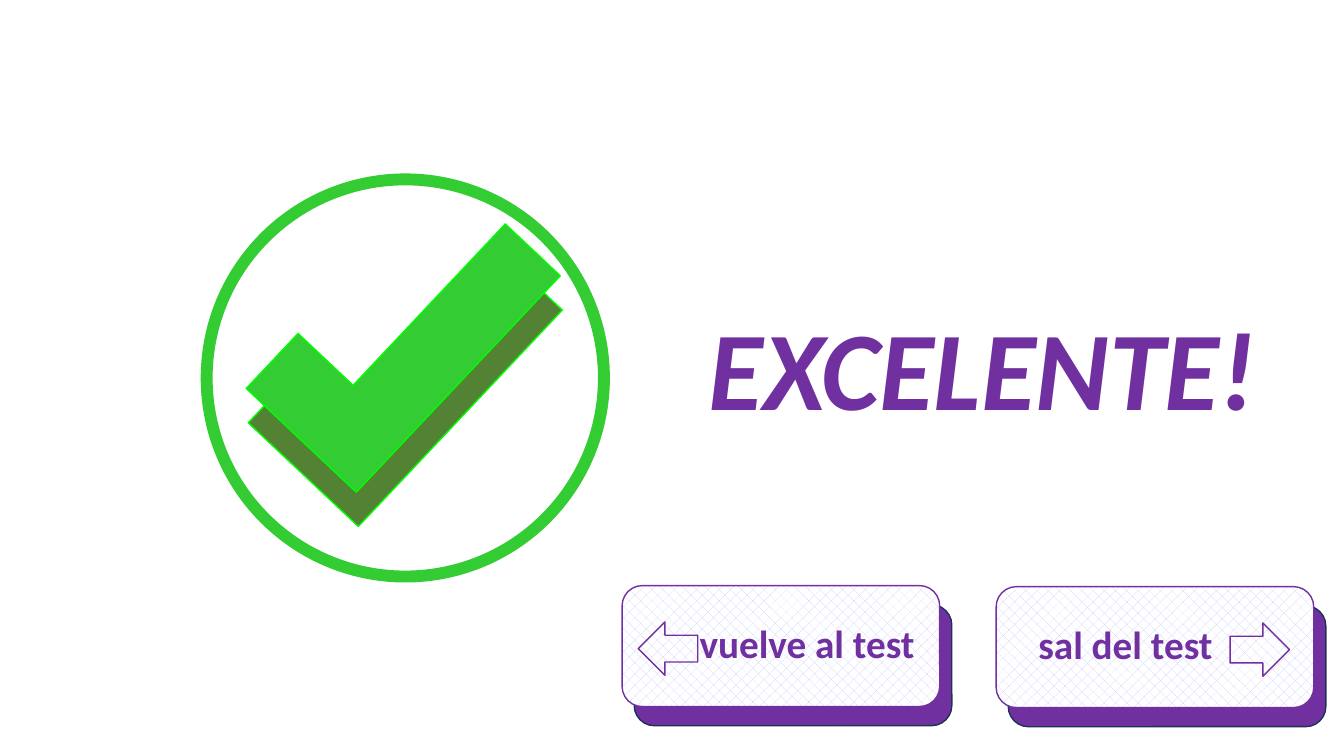
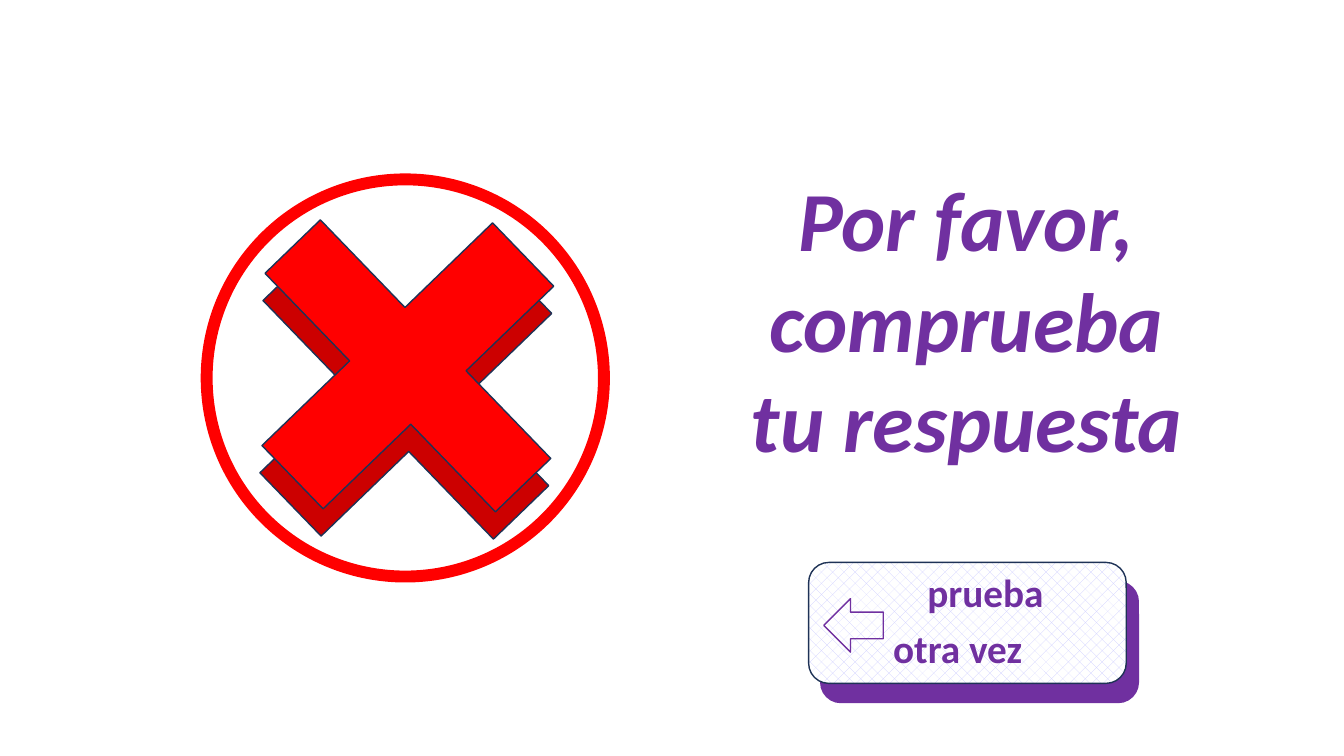
from dataclasses import dataclass

from pptx import Presentation
from pptx.dml.color import RGBColor
from pptx.enum import dml, shapes, text
from pptx.oxml.ns import qn
from pptx.util import Inches, Pt

SHAPE = shapes.MSO_SHAPE


@dataclass(frozen=True)
class Theme:
    font: str = "Calibri"
    purple: str = "7030A0"
    lilac: str = "CCCCFF"
    white: str = "FFFFFF"
    navy: str = "1E3256"
    green: str = "33CC33"
    dark_green: str = "548235"
    lime: str = "00FF00"
    red: str = "FF0000"
    dark_red: str = "CC0000"
    praise_size: int = 80
    advice_size: int = 60
    button_size: int = 28
    thin: float = 1
    ring: float = 8.5


THEME = Theme()
RING_BOX = (2.05, 1.78, 3.94, 3.94)
BUTTON_SIZE = (3.15, 1.2)
BUTTON_SHADOW = (0.12, 0.19)
ARROW_SIZE = (0.59, 0.53)
ARROW_DROP = 0.36


def rgb(value):
    return RGBColor.from_string(value)


def add_preset(slide, kind, box, line, fill=None, width=THEME.thin, rotation=0):
    """Add an outlined preset shape, filled only if a colour is given."""
    shape = slide.shapes.add_shape(kind, *map(Inches, box))
    shape.shadow.inherit = False
    shape.rotation = rotation
    shape.line.color.rgb = rgb(line)
    shape.line.width = Pt(width)
    if fill:
        shape.fill.solid()
        shape.fill.fore_color.rgb = rgb(fill)
    else:
        shape.fill.background()
    return shape


def style_runs(paragraph, size, italic=False):
    for run in paragraph.runs:
        font = run.font
        font.name, font.size = THEME.font, Pt(size)
        font.bold, font.italic = True, italic
        font.color.rgb = rgb(THEME.purple)


def add_message_slide(deck, message, box, size):
    """Add a slide whose title is the large message on the right."""
    slide = deck.slides.add_slide(deck.slide_layouts[5])
    title = slide.shapes.title
    title.left, title.top, title.width, title.height = map(Inches, box)
    frame = title.text_frame
    frame.text = message
    frame.word_wrap = False
    frame.auto_size = text.MSO_AUTO_SIZE.NONE
    frame.vertical_anchor = text.MSO_ANCHOR.TOP
    for paragraph in frame.paragraphs:
        paragraph.alignment = text.PP_ALIGN.CENTER
        style_runs(paragraph, size, italic=True)
    return slide


def add_ring(slide, color):
    add_preset(slide, SHAPE.FLOWCHART_CONNECTOR, RING_BOX, color, width=THEME.ring)


def add_tick(slide, box, fill):
    """Add a mirrored corner shape, turned into a tick."""
    tick = add_preset(slide, SHAPE.from_xml("corner"), box, THEME.lime, fill,
                      rotation=43.3)
    tick._element.spPr.find(qn("a:xfrm")).set("flipH", "1")


def add_cross(slide, box, fill):
    cross = add_preset(slide, SHAPE.CROSS, box, THEME.navy, fill, rotation=46)
    cross.adjustments[0] = 0.38


def add_button(slide, left, top, label, inset, arrow, arrow_offset,
               line=THEME.purple, shadow_line=THEME.navy, first_indent=0):
    """Add a patterned button with its offset shadow, label and arrow."""
    dx, dy = BUTTON_SHADOW
    add_preset(slide, SHAPE.ROUNDED_RECTANGLE, (left + dx, top + dy, *BUTTON_SIZE),
               shadow_line, THEME.purple)
    button = add_preset(slide, SHAPE.ROUNDED_RECTANGLE, (left, top, *BUTTON_SIZE), line)
    button.fill.patterned()
    button.fill.pattern = dml.MSO_PATTERN.PERCENT_25
    button.fill.fore_color.rgb = rgb(THEME.lilac)
    button.fill.back_color.rgb = rgb(THEME.white)

    # Label
    frame = button.text_frame
    frame.text = label
    frame.word_wrap = True
    frame.vertical_anchor = text.MSO_ANCHOR.MIDDLE
    frame.margin_left, frame.margin_right = Inches(inset), 0
    for paragraph in frame.paragraphs:
        paragraph.alignment = text.PP_ALIGN.LEFT
        paragraph.line_spacing = 0.9
        paragraph.space_before = Pt(10)
        style_runs(paragraph, THEME.button_size)
    if first_indent:
        properties = frame.paragraphs[0]._p.get_or_add_pPr()
        properties.set("marL", str(Inches(first_indent)))

    # Direction arrow
    add_preset(slide, arrow, (left + arrow_offset, top + ARROW_DROP, *ARROW_SIZE),
               THEME.purple)


def build_correct_slide(deck):
    slide = add_message_slide(deck, "EXCELENTE!", (6.9, 2.91, 5.69, 1.45),
                              THEME.praise_size)
    add_tick(slide, (3.27, 2.16, 1.5, 2.95), THEME.dark_green)
    add_ring(slide, THEME.green)
    add_tick(slide, (3.25, 1.82, 1.5, 2.95), THEME.green)
    add_button(slide, 6.17, 5.81, "vuelve al test", 0.71, SHAPE.LEFT_ARROW, 0.16)
    add_button(slide, 9.88, 5.82, "sal del test", 0.36, SHAPE.RIGHT_ARROW, 2.32)


def build_retry_slide(deck):
    slide = add_message_slide(deck, "Por favor,\ncomprueba\ntu respuesta",
                              (7.23, 1.61, 4.71, 3.13), THEME.advice_size)
    add_ring(slide, THEME.red)
    add_cross(slide, (2.38, 2.31, 3.29, 3.18), THEME.dark_red)
    add_cross(slide, (2.4, 2.04, 3.29, 3.18), THEME.red)
    add_button(slide, 8.02, 5.58, "prueba\notra vez", 0.78, SHAPE.LEFT_ARROW, 0.15,
               line=THEME.navy, shadow_line=THEME.purple, first_indent=0.34)


def main():
    deck = Presentation()
    deck.slide_width, deck.slide_height = Inches(13.33), Inches(7.5)
    build_correct_slide(deck)
    build_retry_slide(deck)
    deck.save("out.pptx")


if __name__ == "__main__":
    main()
